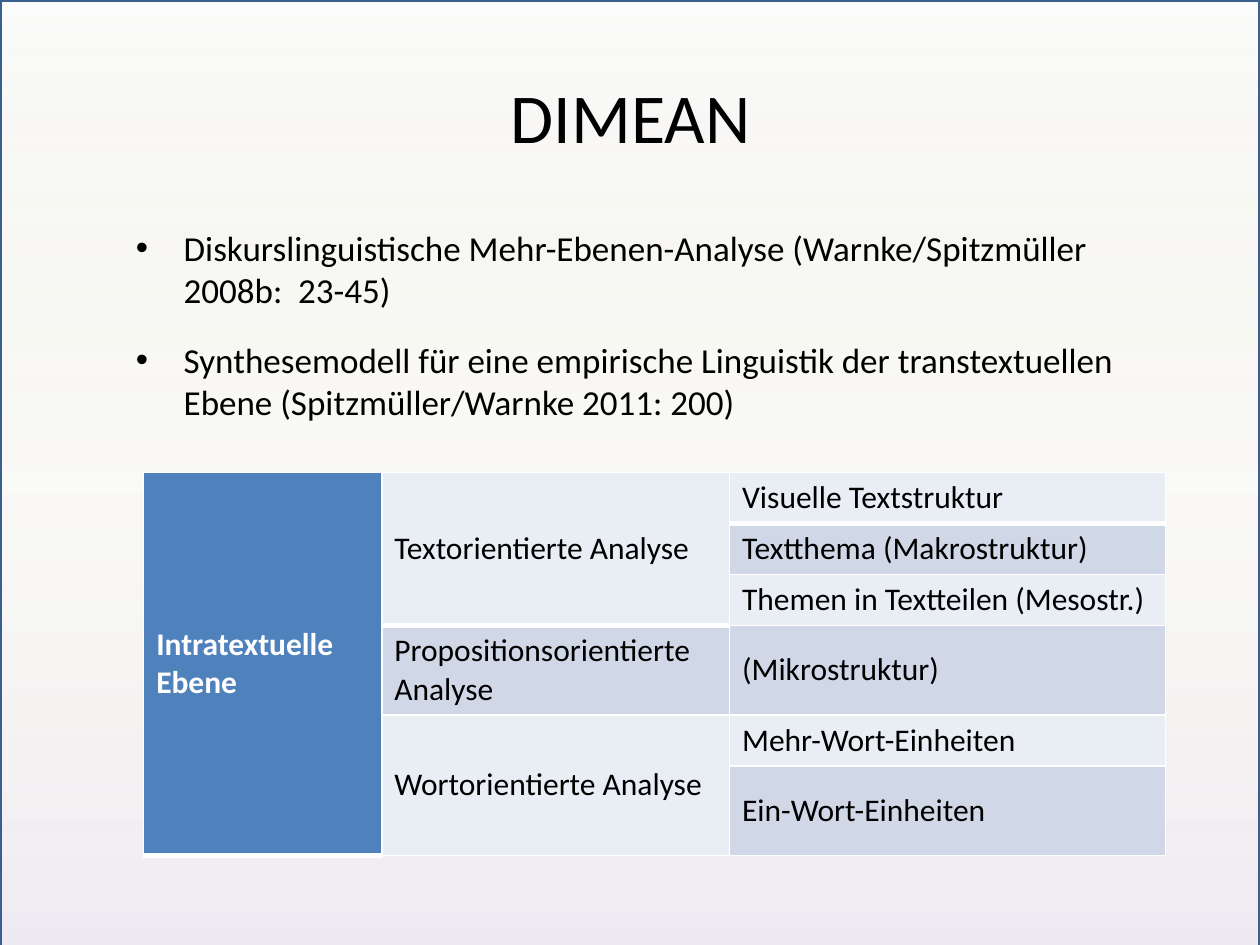
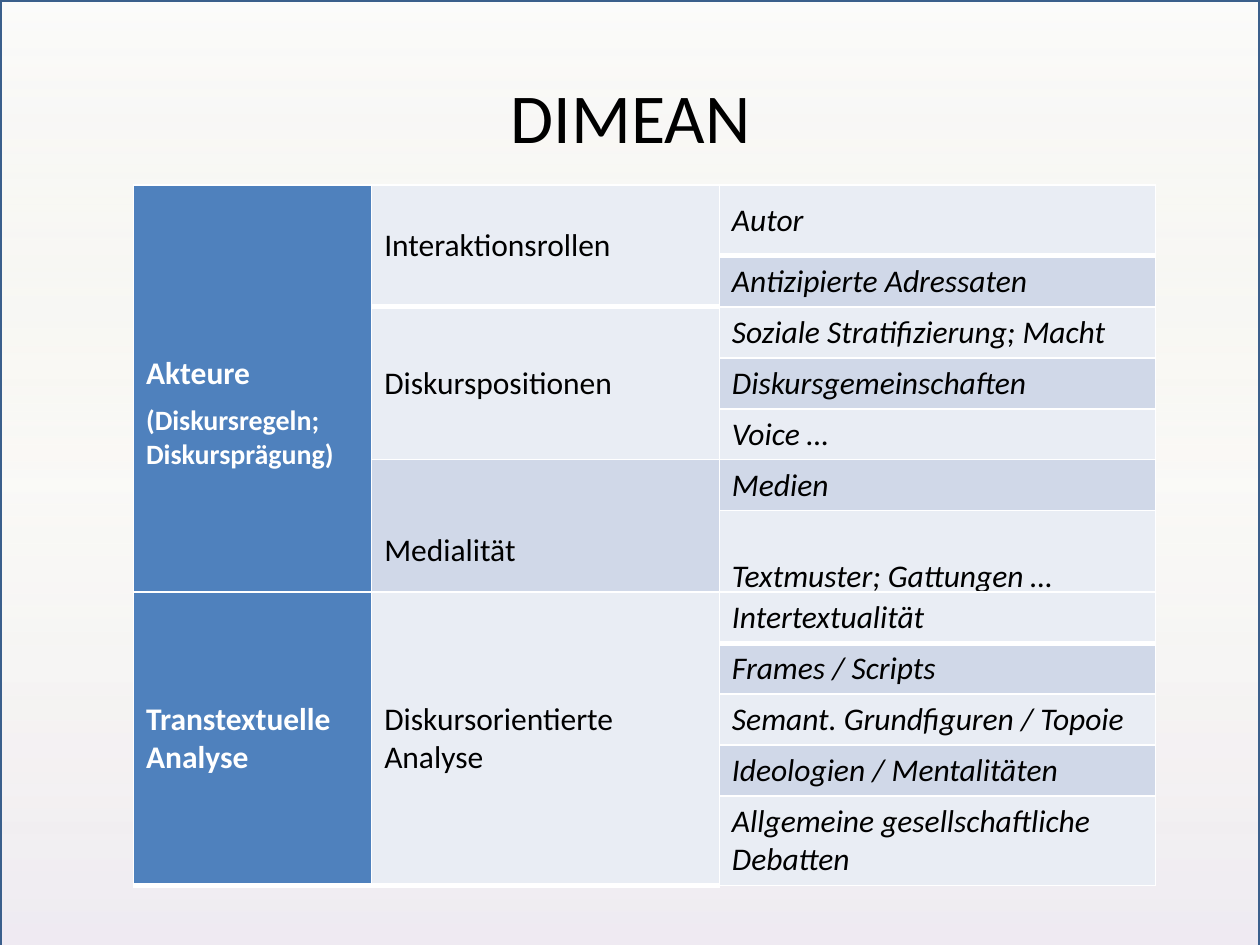
from lxml import etree
from pptx import Presentation
from pptx.dml.color import RGBColor
from pptx.enum.shapes import MSO_SHAPE
from pptx.enum.text import MSO_ANCHOR, PP_ALIGN
from pptx.oxml.ns import qn
from pptx.util import Inches, Pt

RECTANGLE = MSO_SHAPE.RECTANGLE
MIDDLE = MSO_ANCHOR.MIDDLE
CENTER = PP_ALIGN.CENTER

FONT = "Calibri"
BLACK = RGBColor(0x00, 0x00, 0x00)
WHITE = RGBColor(0xFF, 0xFF, 0xFF)
FRAME_BLUE = RGBColor(0x3A, 0x5F, 0x8C)
LEVEL_BLUE = RGBColor(0x4F, 0x81, 0xBD)
BANDS = (RGBColor(0xE9, 0xED, 0xF4), RGBColor(0xD0, 0xD8, 0xE8))
# Position, colour and opacity (all in percent)
BACKDROP_STOPS = (
    (0, RGBColor(0xF2, 0xF2, 0xF2), 30),
    (50, RGBColor(0xC4, 0xBD, 0x97), 7),
    (100, RGBColor(0xB3, 0xA2, 0xC7), 22),
)

COLUMN_WIDTHS = (1.89, 2.76, 3.46)
LINE_ROW = 0.405  # row with one line of 18 pt text
TWO_LINE_ROW = 0.71

BULLETS = (
    "Diskurslinguistische Mehr-Ebenen-Analyse (Warnke/Spitzmüller 2008b:  23-45)",
    "Synthesemodell für eine empirische Linguistik der transtextuellen Ebene "
    "(Spitzmüller/Warnke 2011: 200)",
)

# Each aspect of a level has its details as (text, row height)
INTRATEXTUAL = (
    ("Textorientierte Analyse", (
        ("Visuelle Textstruktur", LINE_ROW),
        ("Textthema (Makrostruktur)", LINE_ROW),
        ("Themen in Textteilen (Mesostr.)", LINE_ROW))),
    ("Propositionsorientierte Analyse", (("(Mikrostruktur)", TWO_LINE_ROW),)),
    ("Wortorientierte Analyse", (
        ("Mehr-Wort-Einheiten", LINE_ROW),
        ("Ein-Wort-Einheiten", TWO_LINE_ROW))),
)
ACTORS = (
    ("Interaktionsrollen", (
        ("Autor", 0.56),
        ("Antizipierte Adressaten", LINE_ROW))),
    ("Diskurspositionen", (
        ("Soziale Stratifizierung; Macht", LINE_ROW),
        ("Diskursgemeinschaften", LINE_ROW),
        ("Voice …", LINE_ROW))),
    ("Medialität", (
        ("Medien", LINE_ROW),
        ("Textmuster; Gattungen …", 1.04))),
)
TRANSTEXTUAL = (
    ("Diskursorientierte Analyse", (
        ("Intertextualität", LINE_ROW),
        ("Frames / Scripts", LINE_ROW),
        ("Semant. Grundfiguren / Topoie", LINE_ROW),
        ("Ideologien / Mentalitäten", LINE_ROW),
        ("Allgemeine gesellschaftliche Debatten", TWO_LINE_ROW))),
)


def format_para(para, size, color=BLACK, bold=False, italic=False):
    for span in para.runs:
        font = span.font
        font.name, font.size = FONT, Pt(size)
        font.bold, font.italic = bold, italic
        font.color.rgb = color


def add_solid_fill(parent, color):
    fill = etree.SubElement(parent, qn("a:solidFill"))
    etree.SubElement(fill, qn("a:srgbClr"), val=str(color))


def add_backdrop(page):
    backdrop = page.shapes.add_shape(RECTANGLE, 0, 0, Inches(10), Inches(7.69))
    backdrop.shadow.inherit = False
    backdrop.line.color.rgb = FRAME_BLUE
    backdrop.line.width = Pt(2)
    backdrop.fill.gradient()
    backdrop.fill.gradient_angle = 270  # top to bottom
    stops = backdrop.fill._fill._gradFill.find(qn("a:gsLst"))
    for stop in list(stops):
        stops.remove(stop)
    for position, color, opacity in BACKDROP_STOPS:
        stop = etree.SubElement(stops, qn("a:gs"), pos=str(position * 1000))
        shade = etree.SubElement(stop, qn("a:srgbClr"), val=str(color))
        etree.SubElement(shade, qn("a:alpha"), val=str(opacity * 1000))


def add_text_box(page, left, top, width, height):
    box = page.shapes.add_textbox(*map(Inches, (left, top, width, height)))
    box.text_frame.word_wrap = True
    return box.text_frame


def add_page(deck):
    """Add a page with the shared backdrop and title."""
    page = deck.slides.add_slide(deck.slide_layouts[6])
    add_backdrop(page)
    frame = add_text_box(page, 1.14, 0.29, 7.73, 1.25)
    frame.vertical_anchor = MIDDLE
    frame.text = "DIMEAN"
    para = frame.paragraphs[0]
    para.alignment = CENTER
    format_para(para, 40)
    return page


def add_bullets(page, left, top, width, height):
    frame = add_text_box(page, left, top, width, height)
    frame.text = "\n".join(BULLETS)
    indent = Inches(0.38)
    for para in frame.paragraphs:
        para.space_before, para.space_after = Pt(4), Pt(12)
        format_para(para, 20)
        properties = para._p.get_or_add_pPr()
        properties.set("marL", str(indent))
        properties.set("indent", str(-indent))
        etree.SubElement(properties, qn("a:buFont"), typeface="Arial")
        etree.SubElement(properties, qn("a:buChar"), char="•")


def style_cell(cell, fill, heavy_bottom, top_edge):
    """White borders; neighbouring rows share the upper cell's bottom line."""
    properties = cell._tc.get_or_add_tcPr()
    widths = {"a:lnL": 1, "a:lnR": 1}
    if top_edge:
        widths["a:lnT"] = 1
    widths["a:lnB"] = 3 if heavy_bottom else 1
    for tag, width in widths.items():
        add_solid_fill(etree.SubElement(properties, qn(tag), w=str(Pt(width))), WHITE)
    cell.fill.solid()
    cell.fill.fore_color.rgb = fill


def fill_block(table, column, first, count, text, fill, **style):
    """Write one cell, merged down over count rows."""
    for row in range(first, first + count):
        style_cell(table.cell(row, column), fill, first == 0, row == 0)
    cell = table.cell(first, column)
    if count > 1:
        cell.merge(table.cell(first + count - 1, column))
    cell.vertical_anchor = MIDDLE
    cell.text = text
    for para in cell.text_frame.paragraphs:
        format_para(para, 18, **style)
    return cell


def add_level_table(page, left, top, level, aspects, italic=False):
    """Level | aspects | details; returns the level cell."""
    heights = [height for _, details in aspects for _, height in details]
    table = page.shapes.add_table(
        len(heights), len(COLUMN_WIDTHS), Inches(left), Inches(top),
        Inches(sum(COLUMN_WIDTHS)), Inches(sum(heights))).table
    table.first_row = table.horz_banding = False
    for column, width in zip(table.columns, COLUMN_WIDTHS):
        column.width = Inches(width)
    for row, height in zip(table.rows, heights):
        row.height = Inches(height)

    level_cell = fill_block(table, 0, 0, len(heights), level, LEVEL_BLUE,
                            color=WHITE, bold=True)
    first = 0
    for aspect, details in aspects:
        fill_block(table, 1, first, len(details), aspect, BANDS[first % 2])
        for row, (detail, _) in enumerate(details, first):
            fill_block(table, 2, row, 1, detail, BANDS[row % 2], italic=italic)
        first += len(details)
    return level_cell


def build_intratextual_page(deck):
    page = add_page(deck)
    add_bullets(page, 0.98, 1.75, 8.27, 1.9)
    add_level_table(page, 1.14, 3.75, "Intratextuelle Ebene", INTRATEXTUAL)


def build_actors_page(deck):
    page = add_page(deck)
    level_cell = add_level_table(
        page, 1.06, 1.47, "Akteure\n(Diskursregeln; Diskursprägung)", ACTORS, italic=True)
    heading, remark = level_cell.text_frame.paragraphs
    heading.space_after = Pt(6)
    format_para(remark, 16, WHITE, bold=True)
    # Overlaps the last row of the actors table
    add_level_table(page, 1.06, 4.7, "Transtextuelle Analyse", TRANSTEXTUAL, italic=True)


def main():
    deck = Presentation()
    deck.slide_width, deck.slide_height = Inches(10), Inches(7.5)
    build_intratextual_page(deck)
    build_actors_page(deck)
    deck.save("out.pptx")


if __name__ == "__main__":
    main()
